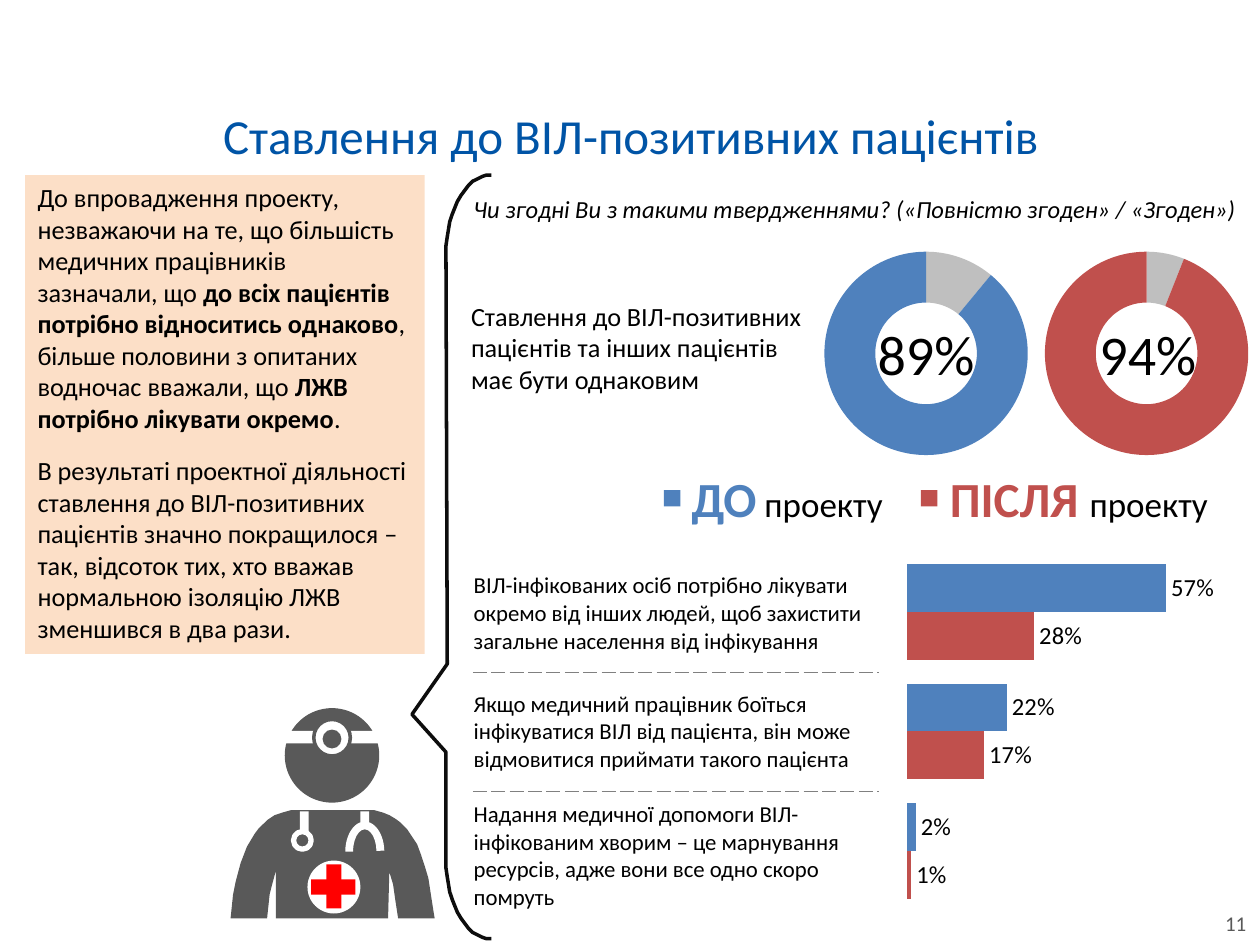
from dataclasses import dataclass
from math import cos, radians, sin

from lxml.etree import SubElement
from pptx import Presentation
from pptx.chart.data import CategoryChartData
from pptx.dml.color import RGBColor
from pptx.enum.chart import XL_CHART_TYPE as ChartType, XL_LABEL_POSITION as LabelPosition
from pptx.enum.shapes import MSO_SHAPE as Preset
from pptx.enum.text import MSO_ANCHOR as Anchor, PP_ALIGN as Align
from pptx.oxml import parse_xml
from pptx.oxml.ns import nsdecls, qn
from pptx.util import Pt

EMU_PER_PX = 9144
FONT = "Calibri"
COLORS = {
    "title": "0054A6", "text": "000000", "before": "4F81BD", "after": "C0504D",
    "rest": "BFBFBF", "figure": "595959", "white": "FFFFFF", "cross": "FF0000",
    "brace": "0D0D0D", "rule": "808080", "summary": "FCD5B5",
}


@dataclass
class Box:
    x: int
    y: int
    w: int
    h: int

    def emu(self) -> tuple:
        return tuple(px(v) for v in (self.x, self.y, self.w, self.h))


@dataclass
class Run:
    text: str
    size: int
    color: str = "text"
    bold: bool = False
    italic: bool = False


@dataclass
class Part:
    preset: Preset
    box: Box
    fill: str
    line: str = ""
    weight: int = 0
    adjust: tuple = ()


@dataclass
class Share:
    key: str
    percent: int
    ring: Box
    label: Box
    marker: Box
    legend: Box
    legend_runs: list


def px(value: int) -> int:
    return value * EMU_PER_PX


def rgb(key: str) -> RGBColor:
    return RGBColor.from_string(COLORS[key])


def style(font, run: Run) -> None:
    font.name, font.size, font.bold, font.italic = FONT, Pt(run.size), run.bold, run.italic
    font.color.rgb = rgb(run.color)


def write(paragraph, runs: list, align=Align.LEFT) -> None:
    paragraph.alignment = align
    for run in runs:
        piece = paragraph.add_run()
        piece.text = run.text
        if len(runs) > 1:
            style(piece.font, run)
    if len(runs) == 1:
        style(paragraph.font, runs[0])


def add_text(slide, box: Box, runs: list, align=Align.LEFT, anchor=Anchor.TOP, wrap=True) -> None:
    frame = slide.shapes.add_textbox(*box.emu()).text_frame
    frame.word_wrap, frame.vertical_anchor = wrap, anchor
    write(frame.paragraphs[0], runs, align)


def paint(shape, fill: str, line: str = "", weight: int = 0) -> None:
    shape.shadow.inherit = False
    if fill:
        shape.fill.solid()
        shape.fill.fore_color.rgb = rgb(fill)
    else:
        shape.fill.background()
    if line:
        shape.line.color.rgb = rgb(line)
        shape.line.width = Pt(weight)
    else:
        shape.line.fill.background()


def add_part(slide, part: Part):
    shape = slide.shapes.add_shape(part.preset, *part.box.emu())
    for index, value in enumerate(part.adjust):
        shape.adjustments[index] = value
    paint(shape, part.fill, part.line, part.weight)
    return shape


def add_outline(slide, points: list, closed: bool, fill: str, line: str = "", weight: int = 0) -> None:
    builder = slide.shapes.build_freeform(*points[0], scale=EMU_PER_PX)
    builder.add_line_segments(points[1:], close=closed)
    paint(builder.convert_to_shape(), fill, line, weight)


def add_brace(slide) -> None:
    right, left, tip, rx, ry = 390, 354, 327, 36, 62
    top, bottom = 139, 745
    angles = [radians(a) for a in range(0, 91, 6)]
    upper = [(right - rx * sin(a), top + ry - ry * cos(a)) for a in angles]
    lower = [(right - rx * cos(a), bottom - ry + ry * sin(a)) for a in angles]
    middle = [(left + 1, 527), (tip, 567), (left, 597)]
    add_outline(slide, upper + middle + lower, False, "", "brace", 2)


def add_doctor(slide) -> None:
    body = [(231, 643), (297, 643), (304, 645), (309, 647), (314, 650), (318, 653), (323, 658),
            (327, 664), (331, 670), (334, 678), (337, 687), (340, 697), (342, 710), (344, 723),
            (345, 729), (316, 729), (314, 716), (312, 702), (309, 692), (308, 729), (219, 729),
            (219, 691), (216, 702), (214, 710), (212, 729), (183, 729), (185, 710), (187, 700),
            (191, 685), (196, 672), (202, 662), (205, 658), (212, 651), (218, 647), (224, 645)]
    add_outline(slide, body, True, "figure")
    rect, oval = Preset.RECTANGLE, Preset.OVAL
    for part in [
        Part(oval, Box(226, 562, 75, 75), "figure"),
        Part(oval, Box(244, 683, 42, 42), "white"),
        Part(rect, Box(259, 686, 12, 35), "cross"),
        Part(rect, Box(247, 698, 35, 12), "cross"),
        Part(rect, Box(226, 580, 75, 10), "white"),
        Part(oval, Box(249, 571, 29, 29), "white", "figure", 2),
        Part(oval, Box(256, 579, 15, 15), "figure"),
        Part(rect, Box(238, 644, 7, 24), "white"),
        Part(oval, Box(233, 660, 14, 14), "figure", "white", 3),
        Part(rect, Box(286, 644, 7, 12), "white"),
        Part(Preset.BLOCK_ARC, Box(274, 652, 31, 48), "white", adjust=(108, 213.81, 0.2)),
    ]:
        add_part(slide, part)


def add_chart(slide, kind, box: Box, series: list, number_format: str):
    data = CategoryChartData(number_format=number_format)
    data.categories = [str(i + 1) for i in range(len(series[0]))]
    for index, values in enumerate(series, 1):
        data.add_series(f"Series {index}", values)
    chart = slide.shapes.add_chart(kind, *box.emu(), data).chart
    chart.has_legend = chart.has_title = False
    style(chart.font, Run("", 18))
    return chart


def add_ring(slide, share: Share) -> None:
    values = [100 - share.percent, share.percent]
    chart = add_chart(slide, ChartType.DOUGHNUT, share.ring, [values], "General")
    plot = chart.plots[0]
    plot._element.find(qn("c:holeSize")).set("val", "55")
    for index, key in enumerate(("rest", share.key)):
        paint_format = plot.series[0].points[index].format
        paint_format.fill.solid()
        paint_format.fill.fore_color.rgb = rgb(key)
        paint_format.line.fill.background()
    add_text(slide, share.label, [Run(f"{share.percent}%", 32)], Align.CENTER, wrap=False)


def add_bars(slide) -> None:
    chart = add_chart(slide, ChartType.BAR_CLUSTERED, Box(686, 426, 314, 306),
                      [(0.57, 0.22, 0.02), (0.28, 0.17, 0.01)], "0%")
    chart.category_axis.reverse_order = True
    chart.category_axis.visible = chart.value_axis.visible = False
    chart.value_axis.has_major_gridlines = False
    chart.value_axis.minimum_scale, chart.value_axis.maximum_scale = -0.05, 0.75
    plot = chart.plots[0]
    plot.gap_width, plot.overlap, plot.vary_by_categories = 50, 0, False
    for series, key in zip(plot.series, ("before", "after")):
        series.format.fill.solid()
        series.format.fill.fore_color.rgb = rgb(key)
        labels = series.data_labels
        labels.show_value, labels.position = True, LabelPosition.OUTSIDE_END
        labels.number_format, labels.number_format_is_linked = "0%", False
        style(labels.font, Run("", 14))
    area = chart._chartSpace.chart.plotArea
    for old in area.findall(qn("c:layout")):
        area.remove(old)
    settings = {"layoutTarget": "inner", "xMode": "edge", "yMode": "edge",
                "x": 0.05, "y": 0.04, "w": 0.92, "h": 0.93}
    fields = "".join(f'<c:{name} val="{value}"/>' for name, value in settings.items())
    area.insert(0, parse_xml(
        f'<c:layout {nsdecls("c")}><c:manualLayout>{fields}</c:manualLayout></c:layout>'))


def add_rule(cell, edge: str) -> None:
    cell._tc.get_or_add_tcPr().insert(0, parse_xml(
        f'<a:{edge} {nsdecls("a")} w="6350"><a:solidFill><a:srgbClr val="{COLORS["rule"]}"/>'
        f'</a:solidFill><a:prstDash val="lgDash"/></a:{edge}>'))


def add_statements(slide, statements: list) -> None:
    heights = (94, 94, 103)
    box = Box(376, 440, 321, sum(heights))
    table = slide.shapes.add_table(len(statements), 1, *box.emu()).table
    table.first_row = table.horz_banding = False
    for index, (statement, height) in enumerate(zip(statements, heights)):
        table.rows[index].height = px(height)
        cell = table.cell(index, 0)
        cell.fill.background()
        cell.margin_left = cell.margin_right = cell.margin_top = cell.margin_bottom = 0
        cell.vertical_anchor = Anchor.MIDDLE
        write(cell.text_frame.paragraphs[0], [Run(statement, 13)])
        if index < len(statements) - 1:
            add_rule(cell, "a:lnB"[2:])
        if index > 0:
            add_rule(cell, "lnT")


def add_summary(slide, paragraphs: list) -> None:
    panel = add_part(slide, Part(Preset.RECTANGLE, Box(20, 139, 317, 380), "summary"))
    tint = panel._element.spPr.find(qn("a:solidFill")).find(qn("a:srgbClr"))
    SubElement(tint, qn("a:alpha")).set("val", "75000")
    frame = panel.text_frame
    frame.word_wrap, frame.vertical_anchor = True, Anchor.TOP
    for index, runs in enumerate(paragraphs):
        paragraph = frame.add_paragraph() if index else frame.paragraphs[0]
        paragraph.space_before = Pt(6 if index else 0)
        paragraph.space_after = Pt(0 if index else 6)
        write(paragraph, runs)


def main() -> None:
    deck = Presentation()
    deck.slide_width, deck.slide_height = px(1000), px(750)
    slide = deck.slides.add_slide(deck.slide_layouts[5])
    title = slide.shapes.title
    title.left, title.top, title.width, title.height = Box(28, 60, 945, 94).emu()
    title.text_frame.vertical_anchor = Anchor.MIDDLE
    write(title.text_frame.paragraphs[0],
          [Run("Ставлення до ВІЛ-позитивних пацієнтів", 28, "title")], Align.CENTER)
    add_doctor(slide)
    add_brace(slide)
    add_bars(slide)
    for share in [
        Share("before", 89, Box(639, 186, 192, 189), Box(686, 249, 98, 64), Box(527, 389, 13, 13),
              Box(539, 367, 219, 57), [Run("ДО", 28, "before", True), Run(" проекту", 20)]),
        Share("after", 94, Box(814, 186, 192, 189), Box(862, 249, 98, 64), Box(731, 389, 13, 13),
              Box(744, 367, 235, 57), [Run("ПІСЛЯ ", 28, "after", True), Run("проекту", 20)]),
    ]:
        add_ring(slide, share)
        add_part(slide, Part(Preset.RECTANGLE, share.marker, share.key))
        add_text(slide, share.legend, share.legend_runs, anchor=Anchor.MIDDLE)
    add_text(slide, Box(366, 149, 634, 34), [Run(
        "Чи згодні Ви з такими твердженнями? («Повністю згоден» / «Згоден»)", 14, italic=True)])
    add_text(slide, Box(364, 233, 294, 98), [Run(
        "Ставлення до ВІЛ-позитивних пацієнтів та інших пацієнтів має бути однаковим", 15)])
    add_text(slide, Box(904, 716, 95, 33), [Run("11", 12, "figure")], Align.RIGHT, Anchor.MIDDLE)
    add_statements(slide, [
        "ВІЛ-інфікованих осіб потрібно лікувати окремо від інших людей, щоб захистити загальне населення від інфікування",
        "Якщо медичний працівник боїться інфікуватися ВІЛ від пацієнта, він може відмовитися приймати такого пацієнта",
        "Надання медичної допомоги ВІЛ-інфікованим хворим – це марнування ресурсів, адже вони все одно скоро помруть",
    ])
    add_summary(slide, [
        [Run("До впровадження проекту, незважаючи на те, що більшість медичних працівників зазначали, що ", 15),
         Run("до всіх пацієнтів потрібно відноситись однаково", 15, bold=True),
         Run(", більше половини з опитаних водночас вважали, що ", 15),
         Run("ЛЖВ потрібно лікувати окремо", 15, bold=True), Run(".", 15)],
        [Run("В результаті проектної діяльності ставлення до ВІЛ-позитивних пацієнтів значно покращилося – "
             "так, відсоток тих, хто вважав нормальною ізоляцію ЛЖВ зменшився в два рази.", 15)],
    ])
    deck.save("out.pptx")


if __name__ == "__main__":
    main()
